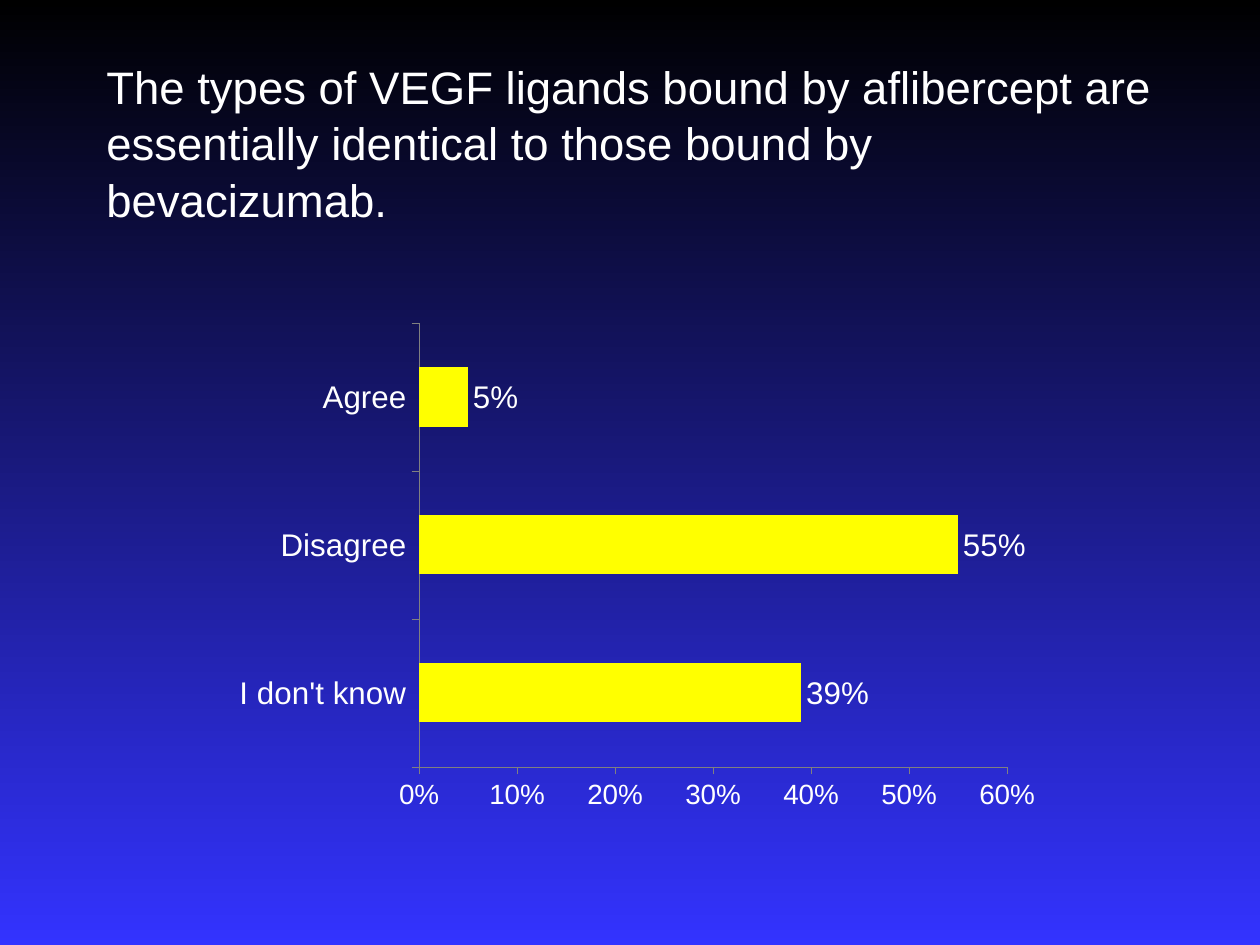
import dataclasses

import pptx
import pptx.chart.data
import pptx.dml.color
import pptx.enum.chart
import pptx.enum.text
import pptx.oxml
import pptx.oxml.ns
import pptx.util

PX = 914400 // 126


@dataclasses.dataclass(frozen=True)
class Theme:
    """Colours, font and type sizes of the slide."""

    top: str = "000000"
    bottom: str = "3333FF"
    text: str = "FFFFFF"
    bar: str = "FFFF00"
    axis: str = "808080"
    font: str = "Arial"
    title: float = 26
    label: float = 17.9
    tick: float = 15.9


THEME = Theme()


def rgb(value):
    """Return a colour object for a hex string."""
    return pptx.dml.color.RGBColor.from_string(value)


def emu(box):
    """Turn a box in px into EMU."""
    return [pptx.util.Emu(v * PX) for v in box]


def set_font(font, size, color=THEME.text):
    """Give a font its face, size and colour."""
    font.name = THEME.font
    font.size = pptx.util.Pt(size)
    font.bold = False
    font.color.rgb = rgb(color)


def add_text(slide, box, text, size=THEME.title, color=THEME.text, spacing=1.0):
    """Place a wrapped, vertically centred text."""
    tf = slide.shapes.add_textbox(*emu(box)).text_frame
    tf.word_wrap = True
    tf.vertical_anchor = pptx.enum.text.MSO_ANCHOR.MIDDLE
    p = tf.paragraphs[0]
    p.line_spacing = spacing
    r = p.add_run()
    r.text = text
    set_font(r.font, size, color)


def fill_background(slide):
    """Fill the slide with a vertical gradient."""
    fill = slide.background.fill
    fill.gradient()
    fill.gradient_angle = 270
    for stop, color, position in zip(fill.gradient_stops, (THEME.top, THEME.bottom), (0, 1)):
        stop.color.rgb = rgb(color)
        stop.position = position


def set_plot_area(chart, box, plot):
    """Fix the inner plot area, given in px within the chart box."""
    area = chart.element.find(".//" + pptx.oxml.ns.qn("c:plotArea"))
    for old in area.findall(pptx.oxml.ns.qn("c:layout")):
        area.remove(old)
    sizes = box[2:] * 2
    parts = "".join(
        f'<c:{name} val="{value / size:.4f}"/>'
        for name, value, size in zip("xywh", plot, sizes)
    )
    area.insert(0, pptx.oxml.parse_xml(
        f'<c:layout {pptx.oxml.ns.nsdecls("c")}><c:manualLayout>'
        '<c:layoutTarget val="inner"/><c:xMode val="edge"/><c:yMode val="edge"/>'
        f'{parts}</c:manualLayout></c:layout>'
    ))


def style_axis(axis, size):
    """Give an axis its line, ticks and labels."""
    axis.has_major_gridlines = False
    axis.major_tick_mark = pptx.enum.chart.XL_TICK_MARK.OUTSIDE
    axis.minor_tick_mark = pptx.enum.chart.XL_TICK_MARK.NONE
    axis.format.line.color.rgb = rgb(THEME.axis)
    axis.format.line.width = pptx.util.Pt(0.25)
    set_font(axis.tick_labels.font, size)


def add_answers(slide, box, plot, answers):
    """Draw the share of each answer as a horizontal bar."""
    data = pptx.chart.data.CategoryChartData(number_format="0%")
    data.categories = list(answers)
    data.add_series("Series 1", list(answers.values()))
    kind = pptx.enum.chart.XL_CHART_TYPE.BAR_CLUSTERED
    chart = slide.shapes.add_chart(kind, *emu(box), data).chart
    chart.has_legend = False
    chart.has_title = False
    set_font(chart.font, THEME.label)
    set_plot_area(chart, box, plot)

    style_axis(chart.category_axis, THEME.label)
    axis = chart.value_axis
    style_axis(axis, THEME.tick)
    axis.minimum_scale, axis.maximum_scale, axis.major_unit = 0, 0.6, 0.1
    axis.tick_labels.number_format = "0%"
    axis.tick_labels.number_format_is_linked = False

    bars = chart.plots[0]
    bars.gap_width = 150
    bars.vary_by_categories = False
    series = bars.series[0]
    series.format.fill.solid()
    series.format.fill.fore_color.rgb = rgb(THEME.bar)
    labels = series.data_labels
    labels.show_value = True
    labels.number_format = "0%"
    labels.number_format_is_linked = False
    labels.position = pptx.enum.chart.XL_LABEL_POSITION.OUTSIDE_END
    set_font(labels.font, THEME.label)


def main():
    """Build the slide and save it."""
    prs = pptx.Presentation()
    prs.slide_width, prs.slide_height = emu((1260, 945))
    s = prs.slides.add_slide(prs.slide_layouts[6])
    fill_background(s)
    add_text(
        s, (94, 42, 1071, 199),
        "The types of VEGF ligands bound by aflibercept are essentially "
        "identical to those bound by bevacizumab.",
        spacing=1.04,
    )
    add_answers(
        s, (150, 301, 1036, 530), (269, 22, 588, 444),
        {"I don't know": 0.39, "Disagree": 0.55, "Agree": 0.05},
    )
    prs.save("out.pptx")


if __name__ == "__main__":
    main()
